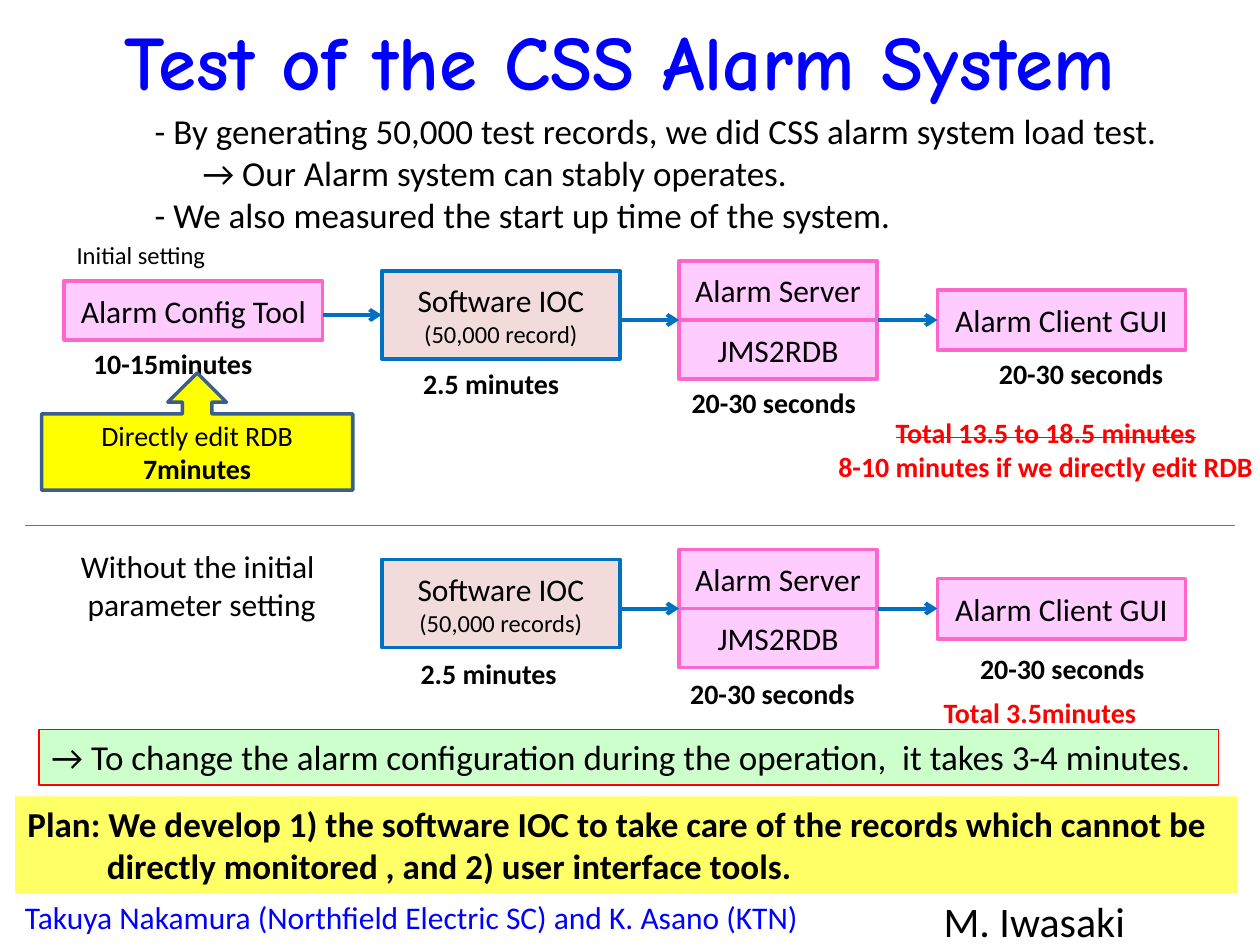
from lxml import etree
from pptx import Presentation
from pptx.dml.color import RGBColor
from pptx.enum.shapes import MSO_CONNECTOR, MSO_SHAPE
from pptx.enum.text import MSO_ANCHOR, PP_ALIGN
from pptx.oxml.ns import qn
from pptx.util import Inches, Pt

LEFT, CENTER = PP_ALIGN.LEFT, PP_ALIGN.CENTER
TOP, MIDDLE = MSO_ANCHOR.TOP, MSO_ANCHOR.MIDDLE
RECTANGLE, CALLOUT = MSO_SHAPE.RECTANGLE, MSO_SHAPE.UP_ARROW_CALLOUT
STRAIGHT = MSO_CONNECTOR.STRAIGHT
LEFT_SIDE = 1

BLACK = RGBColor(0x00, 0x00, 0x00)
BLUE = RGBColor(0x00, 0x00, 0xFF)
RED = RGBColor(0xFF, 0x00, 0x00)
PINK = RGBColor(0xFF, 0xCC, 0xFF)
PINK_EDGE = RGBColor(0xFF, 0x66, 0xCC)
ROSE = RGBColor(0xF2, 0xDC, 0xDB)
FLOW_BLUE = RGBColor(0x00, 0x70, 0xC0)
DIVIDER_BLUE = RGBColor(0x4B, 0x7E, 0xBC)
YELLOW = RGBColor(0xFF, 0xFF, 0x00)
CALLOUT_EDGE = RGBColor(0x3A, 0x5F, 0x8C)
PALE_GREEN = RGBColor(0xCC, 0xFF, 0xCC)
PALE_YELLOW = RGBColor(0xFF, 0xFF, 0x66)

ROW_STEP = 2.29  # distance between the two flow rows


def write(box, lines, size=18, color=BLACK, bold=False, font="Calibri",
          align=LEFT, anchor=TOP, wrap=True):
    """Fill a box; a line is a string or a (string, overrides) pair."""
    frame = box.text_frame
    frame.word_wrap = wrap
    frame.vertical_anchor = anchor
    for index, line in enumerate(lines):
        text, own = (line, {}) if isinstance(line, str) else line
        para = frame.paragraphs[0] if index == 0 else frame.add_paragraph()
        para.alignment = align
        if "indent" in own:
            para._p.get_or_add_pPr().set("marL", str(Inches(own["indent"])))
        span = para.add_run()
        span.text = text
        span.font.name = font
        span.font.size = Pt(own.get("size", size))
        span.font.bold = own.get("bold", bold)
        span.font.color.rgb = color
        if own.get("strike"):
            span._r.get_or_add_rPr().set("strike", "sngStrike")


def add_label(page, left, top, width, height, lines, **style):
    box = page.shapes.add_textbox(Inches(left), Inches(top), Inches(width), Inches(height))
    write(box, lines, **style)


def add_box(page, left, top, width, height, lines, fill, edge=None,
            edge_width=2, kind=RECTANGLE, **style):
    box = page.shapes.add_shape(kind, Inches(left), Inches(top), Inches(width), Inches(height))
    box.shadow.inherit = False
    box.fill.solid()
    box.fill.fore_color.rgb = fill
    if edge is None:
        box.line.fill.background()
    else:
        box.line.color.rgb = edge
        box.line.width = Pt(edge_width)
    write(box, lines, **style)
    return box


def add_step(page, left, top, width, text, height=0.47):
    return add_box(page, left, top, width, height, [text], PINK, PINK_EDGE,
                   align=CENTER, anchor=MIDDLE)


def add_line(page, start, end, y, color, width):
    line = page.shapes.add_connector(STRAIGHT, Inches(start), Inches(y), Inches(end), Inches(y))
    line.line.color.rgb = color
    line.line.width = Pt(width)
    etree.SubElement(line._element.spPr, qn("a:effectLst"))
    return line


def add_arrow(page, start, end, y, target=None):
    arrow = add_line(page, start, end, y, FLOW_BLUE, 2.25)
    etree.SubElement(arrow.line._get_or_add_ln(), qn("a:tailEnd"), type="arrow")
    if target is not None:
        arrow.end_connect(target, LEFT_SIDE)


def add_flow(page, offset, record_note):
    """Draw software IOC -> server pair -> client, and return the IOC box."""
    ioc = add_box(page, 3.03, 2.15 + offset, 1.89, 0.7,
                  ["Software IOC", (record_note, {"size": 14})],
                  ROSE, FLOW_BLUE, align=CENTER, anchor=MIDDLE)
    add_step(page, 5.39, 2.07 + offset, 1.57, "Alarm Server")
    add_step(page, 5.39, 2.54 + offset, 1.57, "JMS2RDB")
    client = add_step(page, 7.44, 2.3 + offset, 1.97, "Alarm Client GUI", height=0.48)
    add_arrow(page, 4.92, 5.39, 2.54 + offset)
    add_arrow(page, 6.97, 7.44, 2.54 + offset, client)
    return ioc


def main():
    deck = Presentation()
    deck.slide_width, deck.slide_height = Inches(10), Inches(7.5)
    page = deck.slides.add_slide(deck.slide_layouts[6])

    # Title and introduction
    add_label(page, 0.42, 0.01, 9, 0.92, ["Test of the CSS Alarm System"], size=44,
              color=BLUE, bold=True, font="Comic Neue", align=CENTER, anchor=MIDDLE)
    add_label(page, 1.13, 0.82, 8.17, 1.11, [
        "- By generating 50,000 test records, we did CSS alarm system load test.",
        ("→ Our Alarm system can stably operates.", {"indent": 0.38}),
        "- We also measured the start up time of the system.",
    ], size=20, wrap=False)

    # Flow with and without the initial setting
    ioc = add_flow(page, 0, "(50,000 record)")
    add_step(page, 0.51, 2.23, 2.05, "Alarm Config Tool")
    add_arrow(page, 2.56, 3.03, 2.5, ioc)
    add_flow(page, ROW_STEP, "(50,000 records)")
    add_line(page, 0.2, 9.8, 4.17, DIVIDER_BLUE, 1)

    # Row headings
    add_label(page, 0.51, 1.86, 1.5, 0.34, ["Initial setting"], size=14)
    add_label(page, 0.36, 4.29, 2.42, 0.71,
              ["Without the initial", ("parameter setting", {"indent": 0.06})], align=CENTER)

    # Times under the boxes
    for left, top, width, text, color in [
        (0.64, 2.7, 1.65, "10-15minutes", BLACK),
        (3.26, 2.86, 1.5, "2.5 minutes", BLACK),
        (5.39, 3.01, 1.57, "20-30 seconds", BLACK),
        (7.83, 2.78, 1.57, "20-30 seconds", BLACK),
        (3.24, 5.16, 1.5, "2.5 minutes", BLACK),
        (5.38, 5.32, 1.57, "20-30 seconds", BLACK),
        (7.68, 5.12, 1.57, "20-30 seconds", BLACK),
        (7.39, 5.47, 1.73, "Total 3.5minutes", RED),
    ]:
        add_label(page, left, top, width, 0.37, [text], size=16, bold=True, color=color)
    add_label(page, 6.46, 3.25, 3.68, 0.64, [
        ("Total 13.5 to 18.5 minutes", {"strike": True}),
        "8-10 minutes if we directly edit RDB",
    ], size=16, bold=True, color=RED, align=CENTER)

    # Shortcut callout
    add_box(page, 0.33, 2.96, 2.47, 0.93,
            ["Directly edit RDB", ("7minutes", {"bold": True})],
            YELLOW, CALLOUT_EDGE, kind=CALLOUT, size=16, align=CENTER, anchor=MIDDLE)

    # Conclusion and plan
    add_box(page, 0.31, 5.79, 9.36, 0.44,
            ["→ To change the alarm configuration during the operation,  it takes 3-4 minutes."],
            PALE_GREEN, RED, edge_width=0.75, size=20)
    add_box(page, 0.12, 6.32, 9.7, 0.77, [
        "Plan: We develop 1) the software IOC to take care of the records which cannot be",
        ("directly monitored , and 2) user interface tools.", {"indent": 0.63}),
    ], PALE_YELLOW, size=20, bold=True)

    # Credits
    add_label(page, 0.1, 7.08, 7.2, 0.4,
              ["Takuya Nakamura (Northfield Electric SC) and K. Asano (KTN)"], color=BLUE)
    add_label(page, 7.39, 7.06, 1.66, 0.5, ["M. Iwasaki"], size=24, wrap=False)

    deck.save("out.pptx")


if __name__ == "__main__":
    main()
